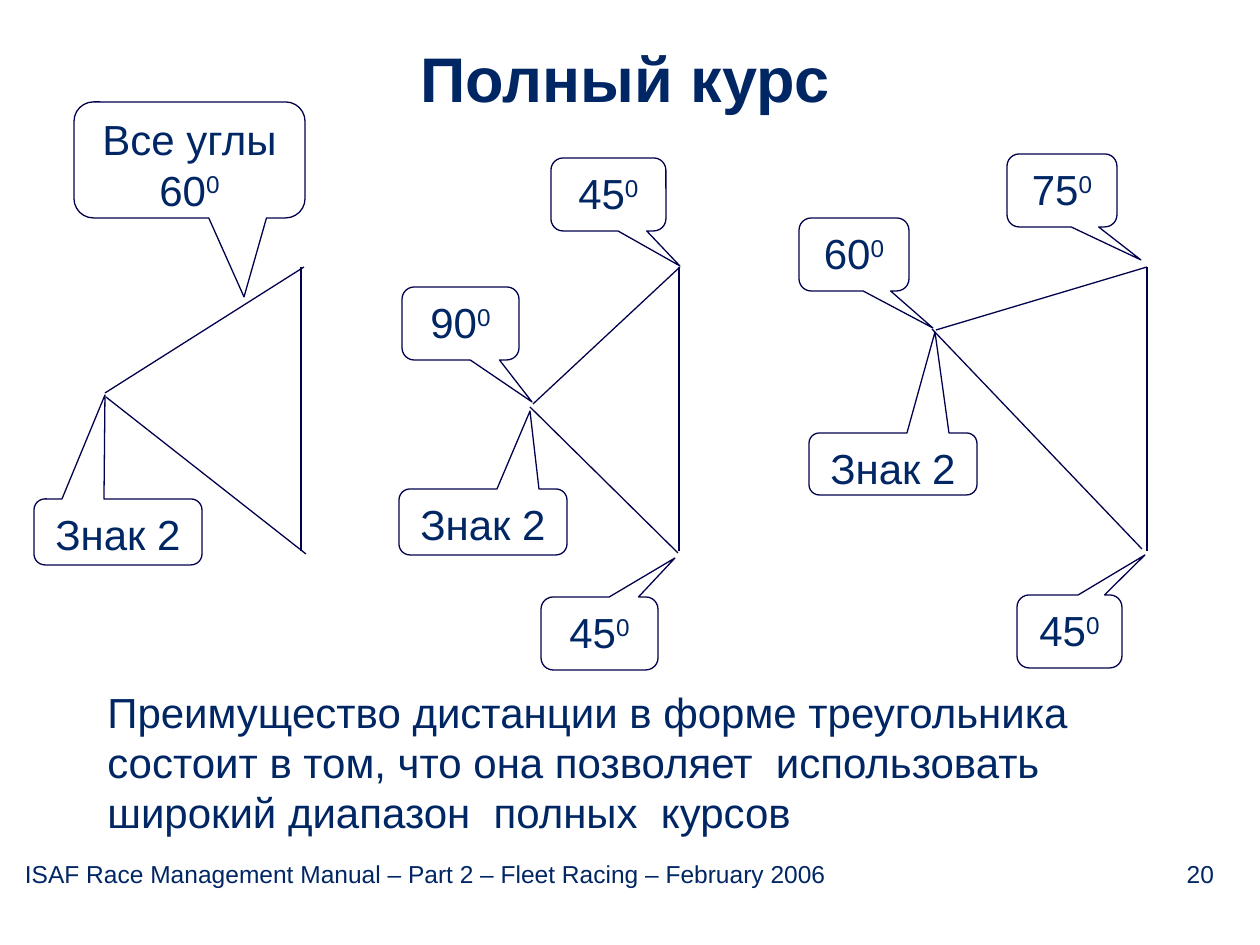
from lxml import etree
from pptx import Presentation
from pptx import util as u
from pptx.dml.color import RGBColor
from pptx.enum import shapes, text
from pptx.oxml import ns

COLORS = {"text": "002664", "line": "00004C"}
FONT = "Arial"
PX = 914400 / 126


def px(n):
    return u.Emu(round(n * PX))


def color(name):
    return RGBColor.from_string(COLORS[name])


class Deck:
    def __init__(self, width, height):
        self.prs = Presentation()
        self.prs.slide_width, self.prs.slide_height = px(width), px(height)
        self.slide = self.prs.slides.add_slide(self.prs.slide_layouts[5])

    def run(self, paragraph, words, size, bold=False, raised=False):
        run = paragraph.add_run()
        run.text = words
        font = run.font
        font.name, font.size, font.bold = FONT, u.Pt(size), bold
        font.color.rgb = color("text")
        if raised:
            font._element.set("baseline", "30000")

    def title(self, words, x, y, w, h):
        title = self.slide.shapes.title
        title.left, title.top, title.width, title.height = map(px, (x, y, w, h))
        frame = title.text_frame
        frame.auto_size = text.MSO_AUTO_SIZE.NONE
        frame.vertical_anchor = text.MSO_ANCHOR.MIDDLE
        frame.paragraphs[0].alignment = text.PP_ALIGN.CENTER
        self.run(frame.paragraphs[0], words, 36, bold=True)

    def textbox(self, words, x, y, w, h, size, inset=True, right_tab=None):
        frame = self.slide.shapes.add_textbox(*map(px, (x, y, w, h))).text_frame
        frame.word_wrap = True
        if not inset:
            frame.margin_left = frame.margin_right = 0
            frame.margin_top = frame.margin_bottom = 0
        paragraph = frame.paragraphs[0]
        if right_tab:
            tabs = etree.SubElement(paragraph._p.get_or_add_pPr(), ns.qn("a:tabLst"))
            etree.SubElement(tabs, ns.qn("a:tab"), pos=str(px(right_tab)), algn="r")
        self.run(paragraph, words, size)

    def line(self, x1, y1, x2, y2):
        line = self.slide.shapes.add_connector(
            shapes.MSO_CONNECTOR.STRAIGHT, *map(px, (x1, y1, x2, y2)))
        line.line.color.rgb = color("line")
        line.line.width = u.Pt(0.75)
        etree.SubElement(line._element.spPr, ns.qn("a:effectLst"))

    def callout(self, words, box, tip, degrees=True):
        x, y, w, h = box
        callout = self.slide.shapes.add_shape(
            shapes.MSO_SHAPE.ROUNDED_RECTANGULAR_CALLOUT, *map(px, box))
        # The pointer is measured from the centre, as a share of the size
        callout.adjustments[0] = (tip[0] - x - w / 2) / w
        callout.adjustments[1] = (tip[1] - y - h / 2) / h
        callout.shadow.inherit = False
        callout.fill.background()
        callout.line.color.rgb = color("line")
        callout.line.width = u.Pt(0.75)
        frame = callout.text_frame
        frame.word_wrap = True
        frame.vertical_anchor = text.MSO_ANCHOR.TOP
        paragraph = frame.paragraphs[0]
        paragraph.alignment = text.PP_ALIGN.CENTER
        self.run(paragraph, words, 24)
        if degrees:
            self.run(paragraph, "0", 24, raised=True)


def main():
    deck = Deck(1260, 945)
    deck.title("Полный курс", 30, 33, 1191, 88)

    # Sides of the three triangular courses
    equilateral = [(301, 267, 301, 551), (304, 267, 105, 393), (106, 397, 306, 554)]
    right_angled = [(679, 267, 679, 551), (680, 267, 533, 404), (530, 407, 678, 553)]
    scalene = [(1147, 267, 1147, 551), (1147, 267, 936, 330), (932, 329, 1142, 549)]
    for side in equilateral + right_angled + scalene:
        deck.line(*side)

    # Angles: words, box, pointer tip
    angles = [
        ("Все углы 60", (74, 102, 231, 116), (244, 297)),
        ("45", (551, 158, 115, 73), (680, 266)),
        ("90", (402, 287, 117, 73), (532, 402)),
        ("45", (541, 597, 117, 73), (675, 558)),
        ("75", (1007, 154, 110, 73), (1141, 260)),
        ("60", (799, 218, 110, 73), (933, 328)),
        ("45", (1017, 595, 105, 73), (1145, 555)),
    ]
    for words, box, tip in angles:
        deck.callout(words, box, tip)

    # Second mark of each course
    marks = [
        ((34, 499, 168, 66), (105, 395)),
        ((399, 489, 168, 66), (530, 411)),
        ((809, 433, 168, 62), (935, 332)),
    ]
    for box, tip in marks:
        deck.callout("Знак 2", box, tip, degrees=False)

    # Conclusion and footer
    deck.textbox("Преимущество дистанции в форме треугольника состоит в том, "
                 "что она позволяет  использовать широкий диапазон  полных  курсов",
                 95, 680, 1061, 165, 24)
    deck.textbox("ISAF Race Management Manual – Part 2 – Fleet Racing – February 2006\t20",
                 25, 859, 1211, 29, 14, inset=False, right_tab=1189)

    deck.prs.save("out.pptx")


if __name__ == "__main__":
    main()
